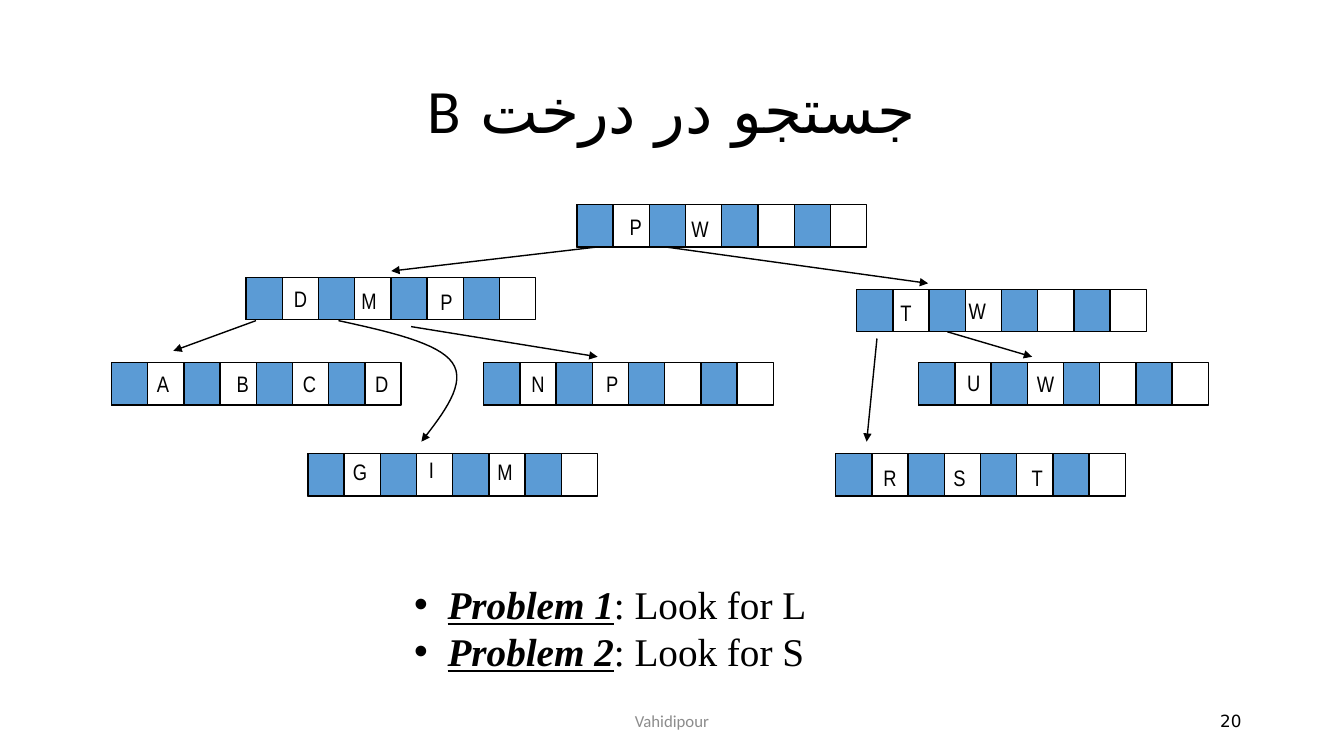
from dataclasses import dataclass
from typing import Optional

from lxml.etree import SubElement
from pptx import Presentation
from pptx.dml.color import RGBColor
from pptx.enum.shapes import MSO_CONNECTOR, MSO_SHAPE
from pptx.enum.text import MSO_ANCHOR, PP_ALIGN
from pptx.oxml.ns import qn
from pptx.util import Cm, Pt


@dataclass(frozen=True)
class Theme:
    ink: RGBColor = RGBColor(0x00, 0x00, 0x00)
    paper: RGBColor = RGBColor(0xFF, 0xFF, 0xFF)
    pointer: RGBColor = RGBColor(0x5B, 0x9B, 0xD5)
    muted: RGBColor = RGBColor(0x8C, 0x8C, 0x8C)
    body_font: str = "Calibri"
    script_font: str = "DejaVu Sans"
    key_font: str = "Arial Narrow"
    problem_font: str = "Times New Roman"
    bullet_font: str = "Arial"
    title_size: int = 44
    problem_size: int = 28
    key_size: int = 16
    footer_size: int = 12
    line_width: int = 1


@dataclass(frozen=True)
class Key:
    """A letter: its centre and top, in cm from the node's corner."""
    letter: str
    centre: float
    top: float


@dataclass(frozen=True)
class Node:
    left: float
    top: float
    keys: tuple[Key, ...]


@dataclass(frozen=True)
class Arrow:
    """An arrow in cm; pointer is (node, cell) when it leaves a cell's bottom."""
    start: tuple[float, float]
    end: tuple[float, float]
    pointer: Optional[tuple[str, int]] = None


THEME = Theme()
NODE_WIDTH, NODE_HEIGHT, POINTERS = 7.3, 1.07, 4
CELL_WIDTH = NODE_WIDTH / (2 * POINTERS)
KEY_WIDTH, KEY_HEIGHT = 1.5, 0.94

NODES = {
    "root": Node(14.54, 5.16, (Key("P", 1.48, 0.08), Key("W", 3.1, 0.13))),
    "left": Node(6.2, 6.99, (Key("D", 1.37, 0.07), Key("M", 3.1, 0.12), Key("P", 5.05, 0.15))),
    "right": Node(21.59, 7.29, (Key("T", 1.24, 0.13), Key("W", 3.04, 0.08))),
    "leaf U": Node(23.15, 9.14, (Key("U", 1.39, 0.03), Key("W", 3.2, 0.05))),
    "leaf N": Node(12.19, 9.14, (Key("N", 1.37, 0.05), Key("P", 3.24, 0.05))),
    "leaf A": Node(2.81, 9.14, (Key("A", 1.3, 0.05), Key("B", 3.31, 0.05),
                                Key("C", 4.99, 0.05), Key("D", 6.81, 0.05))),
    "leaf R": Node(21.06, 11.43, (Key("R", 1.37, 0.13), Key("S", 3.12, 0.15), Key("T", 5.08, 0.15))),
    "leaf G": Node(7.76, 11.43, (Key("G", 1.31, 0), Key("I", 3.11, -0.05), Key("M", 4.97, 0))),
}
ARROWS = (
    Arrow((15.06, 6.23), (9.86, 6.83), ("root", 0)),
    Arrow((16.89, 6.23), (23.39, 7.14), ("root", 1)),
    Arrow((6.45, 8.08), (4.37, 8.84)),
    Arrow((10.36, 8.23), (15.06, 8.99)),
    Arrow((22.1, 8.53), (21.84, 11.13)),
    Arrow((23.93, 8.36), (26.01, 8.99), ("right", 1)),
)
CURVE = (
    ((8.53, 8.08), (9.81, 8.36), (11.05, 8.64), (11.4, 9.14)),
    ((11.4, 9.14), (11.76, 9.65), (11.2, 10.39), (10.62, 11.13)),
)
CURVE_STEPS = 16
PROBLEMS = (("Problem 1", ": Look for L"), ("Problem 2", ": Look for S"))


def add_span(para, text: str, font: str, size: int, color: RGBColor = THEME.ink):
    span = para.add_run()
    span.text = text
    span.font.name, span.font.size = font, Pt(size)
    span.font.color.rgb = color
    return span


def add_box(page, left: float, top: float, width: float, height: float, wrap: bool = True):
    box = page.shapes.add_textbox(Cm(left), Cm(top), Cm(width), Cm(height))
    box.text_frame.word_wrap = wrap
    return box


def set_outline(shape) -> None:
    shape.line.color.rgb = THEME.ink
    shape.line.width = Pt(THEME.line_width)


def add_arrowhead(shape) -> None:
    SubElement(shape.line._get_or_add_ln(), qn("a:tailEnd"), type="triangle")


def add_cell(page, left: float, top: float, width: float, color: RGBColor):
    cell = page.shapes.add_shape(MSO_SHAPE.RECTANGLE, Cm(left), Cm(top), Cm(width), Cm(NODE_HEIGHT))
    cell.shadow.inherit = False
    cell.fill.solid()
    cell.fill.fore_color.rgb = color
    set_outline(cell)
    return cell


def add_node(page, node: Node) -> list:
    """Draw a node and return its pointer cells."""
    add_cell(page, node.left, node.top, NODE_WIDTH, THEME.paper)
    pointers = [add_cell(page, node.left + 2 * index * CELL_WIDTH, node.top,
                         CELL_WIDTH, THEME.pointer) for index in range(POINTERS)]
    for key in node.keys:
        box = add_box(page, node.left + key.centre - KEY_WIDTH / 2,
                      node.top + key.top, KEY_WIDTH, KEY_HEIGHT, wrap=False)
        para = box.text_frame.paragraphs[0]
        para.alignment = PP_ALIGN.CENTER
        add_span(para, key.letter, THEME.key_font, THEME.key_size)
    return pointers


def add_arrow(page, arrow: Arrow, pointers: dict[str, list]) -> None:
    line = page.shapes.add_connector(MSO_CONNECTOR.STRAIGHT, *map(Cm, arrow.start + arrow.end))
    if arrow.pointer:
        name, index = arrow.pointer
        line.begin_connect(pointers[name][index], 2)
    set_outline(line)
    add_arrowhead(line)
    SubElement(line._element.spPr, qn("a:effectLst"))


def bezier_point(points, t: float) -> tuple[int, int]:
    weights = ((1 - t) ** 3, 3 * t * (1 - t) ** 2, 3 * t ** 2 * (1 - t), t ** 3)
    x, y = (sum(w * p[axis] for w, p in zip(weights, points)) for axis in (0, 1))
    return Cm(x), Cm(y)


def add_curved_arrow(page) -> None:
    builder = page.shapes.build_freeform(*map(Cm, CURVE[0][0]))
    builder.add_line_segments([bezier_point(part, step / CURVE_STEPS) for part in CURVE
                               for step in range(1, CURVE_STEPS + 1)], close=False)
    curve = builder.convert_to_shape()
    curve.shadow.inherit = False
    curve.fill.background()
    set_outline(curve)
    add_arrowhead(curve)


def format_title(page) -> None:
    title = page.shapes.title
    title.left, title.top, title.width, title.height = Cm(2.33), Cm(1.02), Cm(29.21), Cm(3.68)
    title.text_frame.vertical_anchor = MSO_ANCHOR.MIDDLE
    para = title.text_frame.paragraphs[0]
    para.alignment, para.line_spacing = PP_ALIGN.CENTER, 0.9
    para._p.get_or_add_pPr().set("rtl", "1")
    span = add_span(para, "جستجو در درخت B", THEME.body_font, THEME.title_size)
    SubElement(span._r.get_or_add_rPr(), qn("a:cs"), typeface=THEME.script_font)


def add_problems(page) -> None:
    frame = add_box(page, 10.19, 14.5, 13.77, 2.64).text_frame
    for index, (label, task) in enumerate(PROBLEMS):
        para = frame.add_paragraph() if index else frame.paragraphs[0]
        properties = para._p.get_or_add_pPr()
        properties.set("marL", str(Cm(0.84)))
        properties.set("indent", str(-Cm(0.84)))
        SubElement(properties, qn("a:buFont"), typeface=THEME.bullet_font)
        SubElement(properties, qn("a:buChar"), char="•")
        span = add_span(para, label, THEME.problem_font, THEME.problem_size)
        span.font.bold = span.font.italic = span.font.underline = True
        add_span(para, task, THEME.problem_font, THEME.problem_size)


def add_footer(page, text: str, left: float, width: float, align: PP_ALIGN,
               font: str, color: RGBColor) -> None:
    frame = add_box(page, left, 17.65, width, 1.02).text_frame
    frame.vertical_anchor = MSO_ANCHOR.MIDDLE
    frame.paragraphs[0].alignment = align
    add_span(frame.paragraphs[0], text, font, THEME.footer_size, color)


def main() -> None:
    deck = Presentation()
    deck.slide_width, deck.slide_height = Cm(33.87), Cm(19.05)
    page = deck.slides.add_slide(deck.slide_layouts.get_by_name("Title Only"))
    format_title(page)
    pointers = {name: add_node(page, node) for name, node in NODES.items()}
    for arrow in ARROWS:
        add_arrow(page, arrow, pointers)
    add_curved_arrow(page)
    add_problems(page)
    add_footer(page, "Vahidipour", 11.22, 11.43, PP_ALIGN.CENTER, THEME.body_font, THEME.muted)
    add_footer(page, "20", 23.92, 7.62, PP_ALIGN.RIGHT, THEME.script_font, THEME.ink)
    deck.save("out.pptx")


if __name__ == "__main__":
    main()
